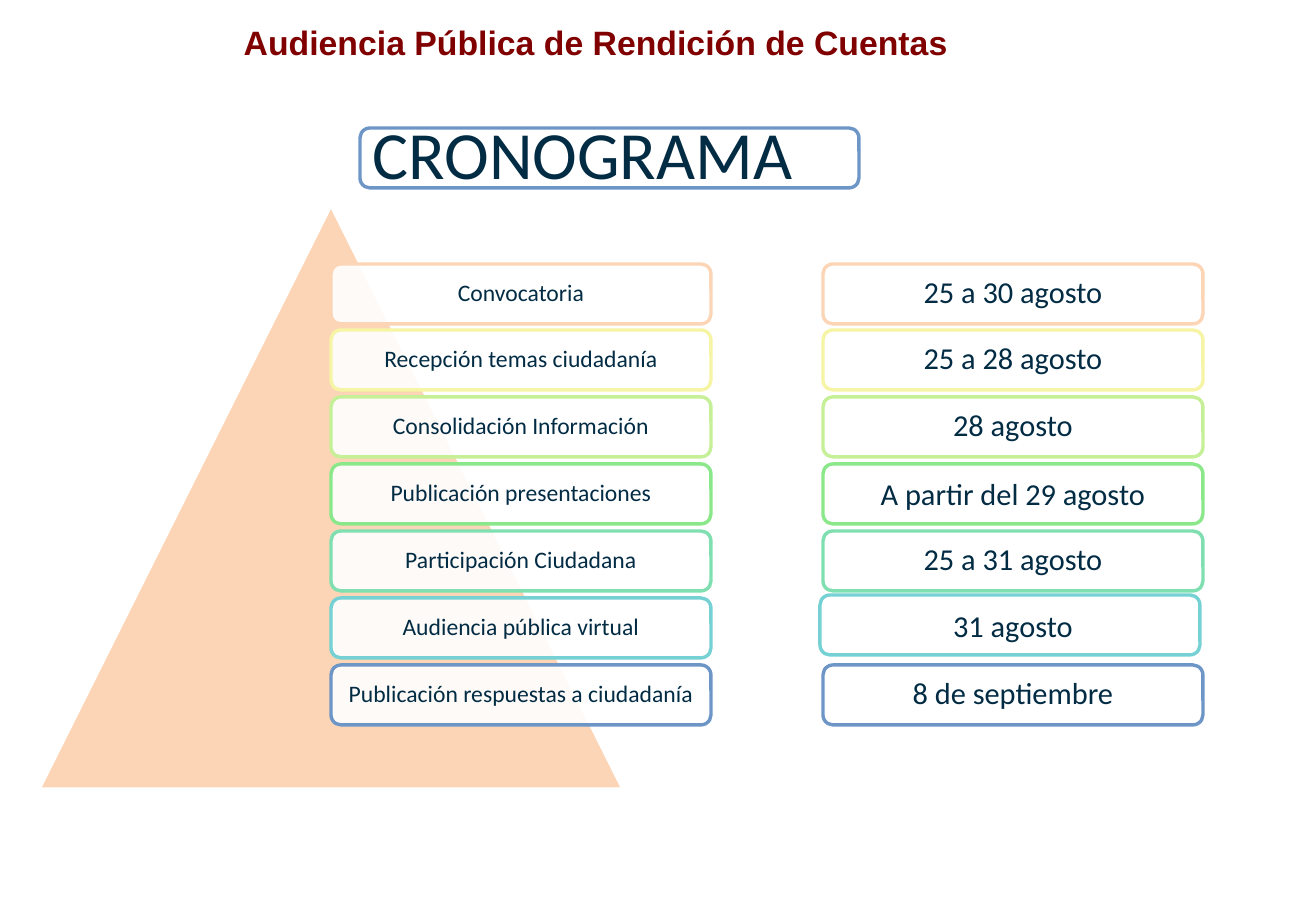
from lxml import etree
from pptx import Presentation
from pptx import util as u
from pptx.dml.color import RGBColor
from pptx.enum import shapes, text
from pptx.oxml.ns import qn

PX = 914400 / 121.5
INK, WHITE, PEACH, BLUE = "022B44", "FFFFFF", "FBD5B5", "6D96C7"

TITLE = "Audiencia Pública de Rendición de Cuentas"
HEADING = "CRONOGRAMA"
# task, date, colour, shift of the date box, shift of the date inside its box
STAGES = [
    ("Convocatoria", "25 a 30 agosto", PEACH, (0, 0), (0, 0)),
    ("Recepción temas ciudadanía", "25 a 28 agosto", "F6F4A5", (0, 0), (0, 0)),
    ("Consolidación Información", "28 agosto", "C5F097", (0, 0), (0, 0)),
    ("Publicación presentaciones", "A partir del 29 agosto", "8AE88A", (0, 0), (0, 2)),
    ("Participación Ciudadana", "25 a 31 agosto", "7FDFB0", (0, 0), (0, 0)),
    ("Audiencia pública virtual", "31 agosto", "75D1D4", (-3, -3), (3, 3)),
    ("Publicación respuestas a ciudadanía", "8 de septiembre", BLUE, (0, 0), (0, 0)),
]
TASK_X, DATE_X = 331, 823
FIRST_Y, LAST_Y = 264, 665
BOX_W, BOX_H = 380, 60


def px(n):
    return u.Emu(round(n * PX))


def rgb(colour):
    return RGBColor.from_string(colour)


def add_outlined(kind, x, y, w, h, fill, line):
    s = sp_tree.add_shape(kind, px(x), px(y), px(w), px(h))
    s.shadow.inherit = False
    s.fill.solid()
    s.fill.fore_color.rgb = rgb(fill)
    s.line.color.rgb = rgb(line)
    s.line.width = u.Pt(2)
    return s


def write(tf, words, font, size, colour, bold=False):
    tf.word_wrap = True
    p = tf.paragraphs[0]
    p.text = words
    p.alignment = text.PP_ALIGN.CENTER
    p.font.name, p.font.size, p.font.bold = font, u.Pt(size), bold
    p.font.color.rgb = rgb(colour)
    return p


def add_label(words, x, y, w, size, line, shift=(0, 0)):
    """Rounded box, 90% opaque, with its text moved by shift from the centre."""
    s = add_outlined(shapes.MSO_SHAPE.ROUNDED_RECTANGLE, x, y, w, BOX_H, WHITE, line)
    colour = s.fill._xPr.find(qn("a:solidFill"))[0]
    etree.SubElement(colour, qn("a:alpha")).set("val", "90000")
    tf = s.text_frame
    tf.vertical_anchor = text.MSO_ANCHOR.MIDDLE
    dx, dy = shift
    tf.margin_left, tf.margin_right = px(max(2 * dx, 0)), px(max(-2 * dx, 0))
    tf.margin_top, tf.margin_bottom = px(max(2 * dy, 0)), px(max(-2 * dy, 0))
    write(tf, words, "Calibri", size, INK).line_spacing = 0.9


prs = Presentation()
prs.slide_width, prs.slide_height = px(1316), px(911)
sp_tree = prs.slides.add_slide(prs.slide_layouts[6]).shapes

add_label(HEADING, 360, 128, 499, 40, BLUE, shift=(-27, 0))
add_outlined(shapes.MSO_SHAPE.ISOSCELES_TRIANGLE, 39, 205, 584, 584, PEACH, WHITE)

for i, (task, date, colour, (dx, dy), date_shift) in enumerate(STAGES):
    y = FIRST_Y + i * (LAST_Y - FIRST_Y) // (len(STAGES) - 1)
    add_label(task, TASK_X, y, BOX_W, 14, colour)
    add_label(date, DATE_X + dx, y + dy, BOX_W, 18, colour, date_shift)

title = sp_tree.add_textbox(px(180), px(16), px(832), px(53))
write(title.text_frame, TITLE, "Arial", 20, "800000", bold=True)

prs.save("out.pptx")
